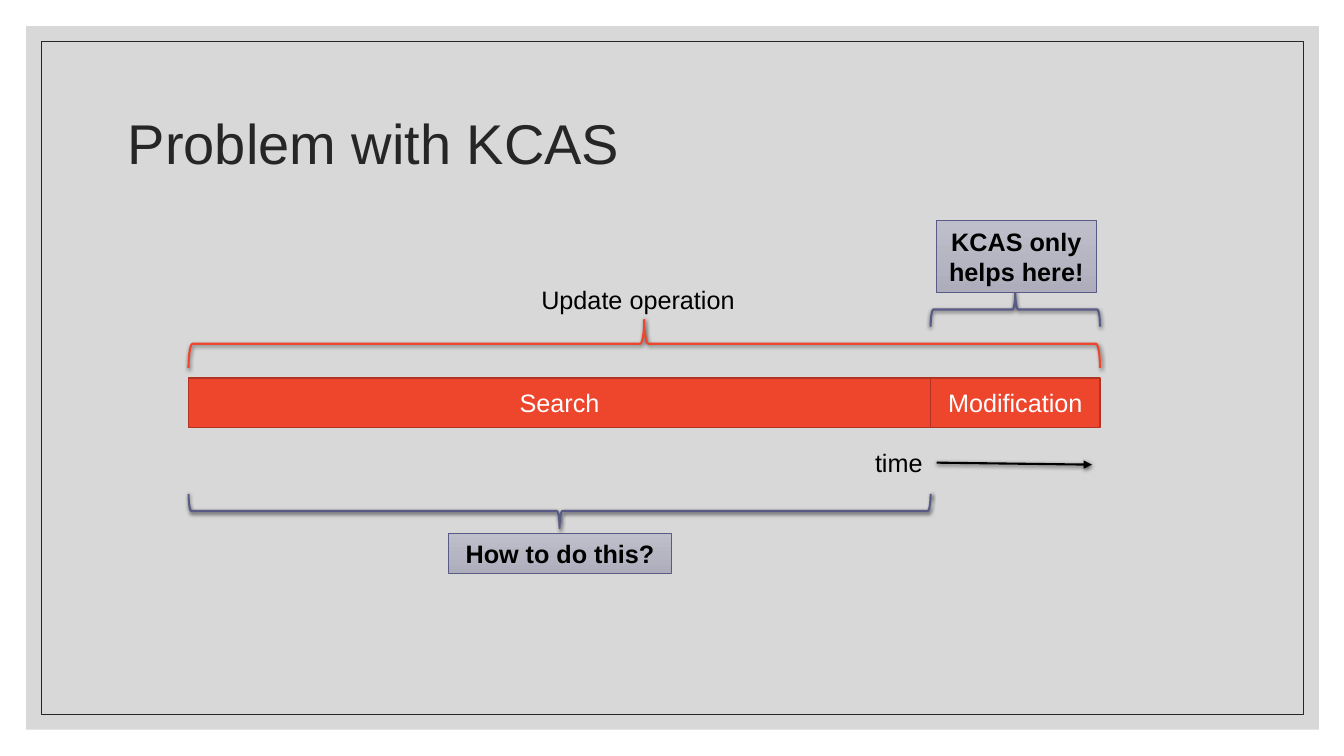
from lxml.etree import SubElement
from pptx import Presentation
from pptx.dml.color import RGBColor
from pptx.enum.shapes import MSO_CONNECTOR, MSO_SHAPE as Preset
from pptx.enum.text import MSO_ANCHOR as Anchor, MSO_AUTO_SIZE as AutoSize, PP_ALIGN as Align
from pptx.oxml.ns import qn
from pptx.util import Inches, Pt

BLACK = RGBColor(0x00, 0x00, 0x00)
WHITE = RGBColor(0xFF, 0xFF, 0xFF)
CHARCOAL = RGBColor(0x26, 0x26, 0x26)
PANEL_GRAY = RGBColor(0xBF, 0xBF, 0xBF)
RED = RGBColor(0xEE, 0x46, 0x2D)
DARK_RED = RGBColor(0xB0, 0x34, 0x21)
SLATE = RGBColor(0x59, 0x5A, 0x85)
LIGHT_LILAC = RGBColor(0xBF, 0xBF, 0xCB)
LILAC = RGBColor(0xAD, 0xAD, 0xBC)


def add_soft_shadow(effects):
    """Put a small downward shadow into an effect list."""
    shadow = SubElement(effects, qn("a:outerShdw"), blurRad=str(Pt(3)), dist=str(Pt(1)),
                        dir="5400000", algn="ctr", rotWithShape="0")
    color = SubElement(shadow, qn("a:srgbClr"), val=str(BLACK))
    SubElement(color, qn("a:alpha"), val="63000")


def add_preset(slide, preset, box, line_color=None, line_width=1, fill_color=None):
    """Add a preset shape without shadow, filled and outlined as asked."""
    shape = slide.shapes.add_shape(preset, *map(Inches, box))
    if fill_color is None:
        shape.fill.background()
    else:
        shape.fill.solid()
        shape.fill.fore_color.rgb = fill_color
    if line_color is None:
        shape.line.fill.background()
    else:
        shape.line.color.rgb = line_color
        shape.line.width = Pt(line_width)
    shape.shadow.inherit = False
    return shape


def write_lines(shape, lines, color=BLACK, size=18, bold=False, align=Align.LEFT):
    """Write one paragraph per line of text and return the text frame."""
    frame = shape.text_frame
    frame.text = "\n".join(lines)
    for paragraph in frame.paragraphs:
        paragraph.alignment = align
        font = paragraph.font
        font.name, font.size, font.bold = "Arial", Pt(size), bold
        font.color.rgb = color
    return frame


def fit_to_text(frame):
    """Let the shape grow around unwrapped text."""
    frame.word_wrap = False
    frame.auto_size = AutoSize.SHAPE_TO_FIT_TEXT


def add_label(slide, box, text):
    """Add a plain one-line label."""
    fit_to_text(write_lines(slide.shapes.add_textbox(*map(Inches, box)), [text]))


def add_callout(slide, box, lines):
    """Add a lilac gradient box with bold text."""
    callout = add_preset(slide, Preset.RECTANGLE, box, SLATE, 0.5)
    callout.fill.gradient()
    callout.fill.gradient_angle = 270
    for stop, color in zip(callout.fill.gradient_stops, (LIGHT_LILAC, LILAC)):
        stop.color.rgb = color
    fit_to_text(write_lines(callout, lines, bold=True, align=Align.CENTER))


def add_brace(slide, box, color, rotation):
    """Add a brace turned to lie flat inside the box."""
    left, top, width, height = box
    shift = (width - height) / 2
    brace = add_preset(slide, Preset.RIGHT_BRACE, (left + shift, top - shift, height, width),
                       color, 1.5)
    brace.rotation = rotation
    add_soft_shadow(brace._element.spPr.find(qn("a:effectLst")))


def add_frame(slide, box):
    """Add the translucent panel and the thin border inside it."""
    left, top, width, height = box
    inset = 0.15
    panel = add_preset(slide, Preset.RECTANGLE, box, fill_color=PANEL_GRAY)
    color = panel._element.spPr.find(qn("a:solidFill")).find(qn("a:srgbClr"))
    SubElement(color, qn("a:alpha"), val="60000")
    inner = (left + inset, top + inset, width - 2 * inset, height - 2 * inset)
    add_preset(slide, Preset.RECTANGLE, inner, CHARCOAL, 0.5)


def add_title(slide, box, text):
    """Add the slide title."""
    frame = write_lines(slide.shapes.add_textbox(*map(Inches, box)), [text], CHARCOAL, 40)
    frame.word_wrap = True
    frame.vertical_anchor = Anchor.MIDDLE
    frame.paragraphs[0].line_spacing = 0.9


def add_time_arrow(slide, left, top, length):
    """Add the time label and the arrow on its right."""
    label_width = 0.71
    add_label(slide, (left, top, label_width, 0.4), "time")
    start, middle = left + label_width, top + 0.2
    arrow = slide.shapes.add_connector(
        MSO_CONNECTOR.STRAIGHT,
        *map(Inches, (start, middle, start + length, middle + 0.02)))
    arrow.line.color.rgb = BLACK
    arrow.line.width = Pt(1.5)
    properties = arrow._element.spPr
    SubElement(properties.find(qn("a:ln")), qn("a:tailEnd"), type="triangle")
    add_soft_shadow(SubElement(properties, qn("a:effectLst")))


def add_timeline(slide, box, search_width):
    """Add the two phases of an update with their braces and remarks."""
    left, top, width, height = box
    split = left + search_width
    modification_width = width - search_width
    phases = (("Search", left, search_width), ("Modification", split, modification_width))
    for text, phase_left, phase_width in phases:
        bar = add_preset(slide, Preset.RECTANGLE, (phase_left, top, phase_width, height),
                         DARK_RED, 1, RED)
        frame = write_lines(bar, [text], WHITE, align=Align.CENTER)
        frame.vertical_anchor = Anchor.MIDDLE

    add_brace(slide, (left, top - 0.58, width, 0.48), RED, 270)
    add_label(slide, (left + 3.4, top - 0.98, 2.25, 0.4), "Update operation")
    add_time_arrow(slide, split - 0.65, top + 0.64, 1.54)

    add_brace(slide, (split, top - 0.85, modification_width, 0.34), SLATE, 270)
    add_callout(slide, (split + 0.06, top - 1.56, 1.58, 0.71), ["KCAS only", "helps here!"])
    add_brace(slide, (left, top + 1.15, search_width, 0.34), SLATE, 90)
    add_callout(slide, (left + 2.58, top + 1.54, 2.21, 0.4), ["How to do this?"])


def main():
    """Build the slide and save it."""
    presentation = Presentation()
    presentation.slide_width = Inches(13.33)
    presentation.slide_height = Inches(7.5)
    slide = presentation.slides.add_slide(presentation.slide_layouts[6])
    add_frame(slide, (0.26, 0.26, 12.82, 6.98))
    add_title(slide, (1.17, 0.7, 11, 1.5), "Problem with KCAS")
    add_timeline(slide, (1.87, 3.75, 9.04, 0.49), 7.36)
    presentation.save("out.pptx")


if __name__ == "__main__":
    main()
